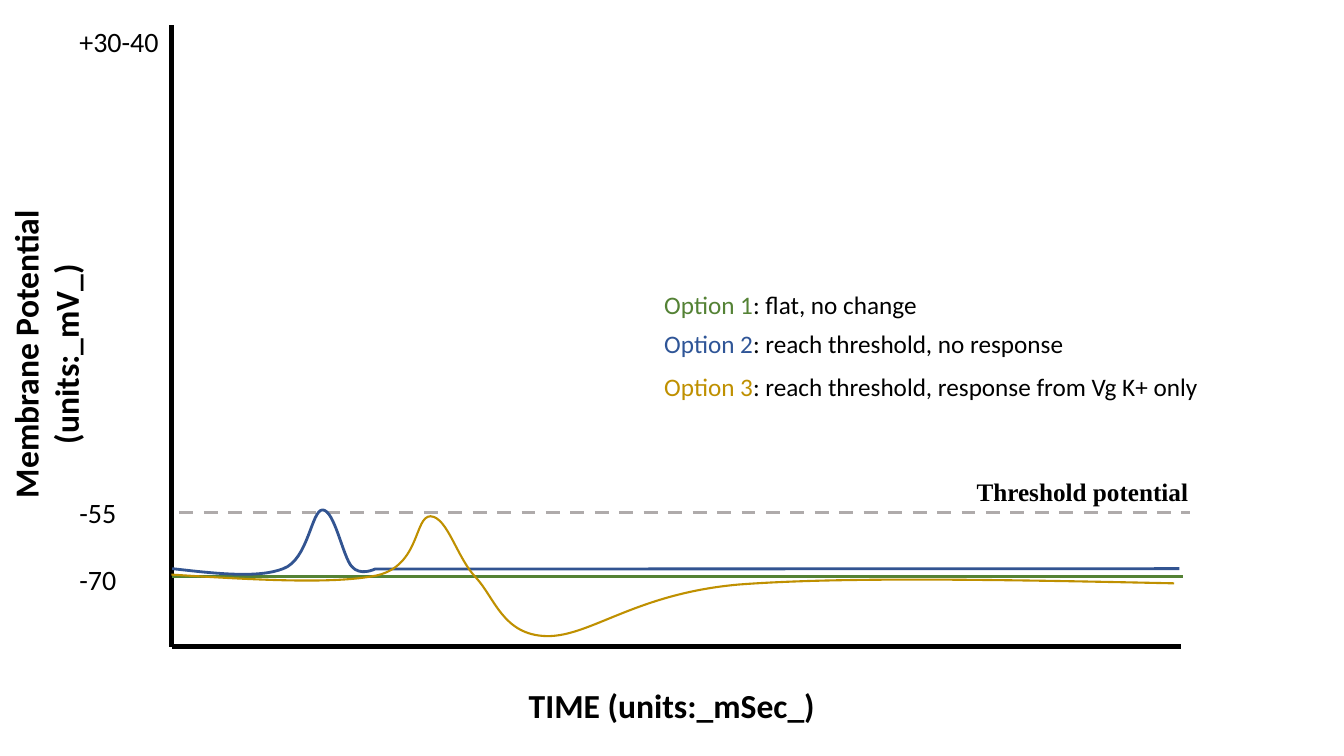
from lxml.etree import SubElement
from pptx import Presentation
from pptx.dml.color import RGBColor
from pptx.enum.dml import MSO_LINE
from pptx.enum.shapes import MSO_CONNECTOR
from pptx.enum.text import PP_ALIGN
from pptx.oxml.ns import qn
from pptx.util import Cm, Pt

BLACK, GREEN, GOLD = "000000", "548235", "BF9000"

# start x, start y, end x, end y (cm), colour, width (pt), dash
LINES = [
    (4.33, 0.64, 4.33, 16.3, BLACK, 3.75, None),
    (29.75, 16.3, 4.33, 16.3, BLACK, 3.75, None),
    (4.52, 12.91, 30, 12.91, "AFABAB", 2.5, MSO_LINE.DASH),
    (4.34, 14.53, 29.82, 14.53, GREEN, 2.5, None),
]

# colour, width (pt), start point, then pieces:
# two controls and an end for a curve, an end alone for a straight piece
RESPONSES = [
    ("325491", 2, (4.34, 14.33), [
        [(5.41, 14.45), (6.5, 14.58), (7.14, 14.33)],
        [(7.77, 14.1), (7.85, 12.85), (8.13, 12.85)],
        [(8.43, 12.85), (8.64, 14.02), (8.86, 14.27)],
        [(9.07, 14.53), (9.45, 14.34), (9.45, 14.34)],
        [(29.72, 14.33)],
    ]),
    (GOLD, 1.5, (4.32, 14.48), [
        [(6.38, 14.61), (8.41, 14.73), (9.5, 14.5)],
        [(10.59, 14.25), (10.44, 13.01), (10.85, 13.01)],
        [(11.28, 13.03), (11.51, 14.05), (11.99, 14.55)],
        [(12.47, 15.06), (12.67, 16), (13.77, 16.03)],
        [(14.88, 16.05), (16, 14.96), (18.62, 14.73)],
        [(21.26, 14.53), (25.43, 14.61), (29.59, 14.7)],
    ]),
]

AXIS_TITLE = {"size": Pt(24), "name": "Calibri", "bold": True}
TICK = {"size": Pt(20), "name": "Calibri"}
THRESHOLD = {"size": Pt(18), "name": "Times New Roman", "bold": True}
OPTION = {"size": Pt(18), "name": "Calibri"}

# left, top, width, height (cm), rotation, alignment, wrap, font,
# paragraphs: space before (pt) and (text, colour) runs
CENTER, LEFT = PP_ALIGN.CENTER, PP_ALIGN.LEFT
TEXTS = [
    (13.02, 17.13, 7.82, 1.27, 0, CENTER, True, AXIS_TITLE,
     [(0, [("TIME (units:_mSec_)", BLACK)])]),
    (-3.81, 7.77, 9.93, 2.31, 270, CENTER, True, AXIS_TITLE,
     [(0, [("Membrane Potential (units:_mV_)", BLACK)])]),
    (1.75, 0.5, 3.12, 14.78, 0, LEFT, True, TICK,
     [(0, [("+30-40", BLACK)]), (312, [("-55", BLACK)]), (24, [("-70", BLACK)])]),
    (24.36, 11.89, 7.42, 1.02, 0, LEFT, True, THRESHOLD,
     [(0, [("Threshold potential", BLACK)])]),
]

# top, width (cm), name, colour, meaning
OPTIONS = [
    (7.16, 6.96, "Option 1", GREEN, ": flat, no change"),
    (8.15, 10.69, "Option 2", "2F5597", ": reach threshold, no response"),
    (9.22, 14.12, "Option 3", GOLD, ": reach threshold, response from Vg K+ only"),
]
OPTION_LEFT, OPTION_HEIGHT = 16.49, 1.02


def rgb(value):
    return RGBColor.from_string(value)


def style_line(line, color, width, dash=None):
    line.color.rgb = rgb(color)
    line.width = Pt(width)
    if dash:
        line.dash_style = dash


def add_line(shapes, x1, y1, x2, y2, color, width, dash):
    connector = shapes.add_connector(
        MSO_CONNECTOR.STRAIGHT, Cm(x1), Cm(y1), Cm(x2), Cm(y2))
    style_line(connector.line, color, width, dash)
    SubElement(connector._element.spPr, qn("a:effectLst"))


def bend(outline, pieces):
    """Turn each three line segments of a curved piece into one cubic Bezier."""
    segments = iter(outline.findall(qn("a:lnTo")))
    for piece in pieces:
        parts = [next(segments) for _ in piece]
        if len(parts) == 3:
            curve = SubElement(outline, qn("a:cubicBezTo"))
            parts[0].addprevious(curve)
            for part in parts:
                curve.append(part[0])
                outline.remove(part)


def add_response(shapes, color, width, start, pieces):
    builder = shapes.build_freeform(Cm(start[0]), Cm(start[1]))
    points = [(Cm(x), Cm(y)) for piece in pieces for x, y in piece]
    builder.add_line_segments(points, close=False)
    response = builder.convert_to_shape()
    bend(next(response._element.iter(qn("a:path"))), pieces)
    response.fill.background()
    response.shadow.inherit = False
    style_line(response.line, color, width)


def add_text(shapes, left, top, width, height, rotation, align, wrap, font, paragraphs):
    box = shapes.add_textbox(Cm(left), Cm(top), Cm(width), Cm(height))
    box.rotation = rotation
    frame = box.text_frame
    frame.word_wrap = wrap
    for index, (space, runs) in enumerate(paragraphs):
        paragraph = frame.add_paragraph() if index else frame.paragraphs[0]
        paragraph.alignment = align
        paragraph.space_before = Pt(space)
        for text, color in runs:
            run = paragraph.add_run()
            run.text = text
            run.font.color.rgb = rgb(color)
            for key, value in font.items():
                setattr(run.font, key, value)


def main():
    deck = Presentation()
    deck.slide_width, deck.slide_height = Cm(33.87), Cm(19.05)
    shapes = deck.slides.add_slide(deck.slide_layouts[6]).shapes
    for line in LINES:
        add_line(shapes, *line)
    for response in RESPONSES:
        add_response(shapes, *response)
    for text in TEXTS:
        add_text(shapes, *text)
    for top, width, name, color, meaning in OPTIONS:
        add_text(shapes, OPTION_LEFT, top, width, OPTION_HEIGHT, 0, LEFT, False,
                 OPTION, [(0, [(name, color), (meaning, BLACK)])])
    deck.save("out.pptx")


if __name__ == "__main__":
    main()
